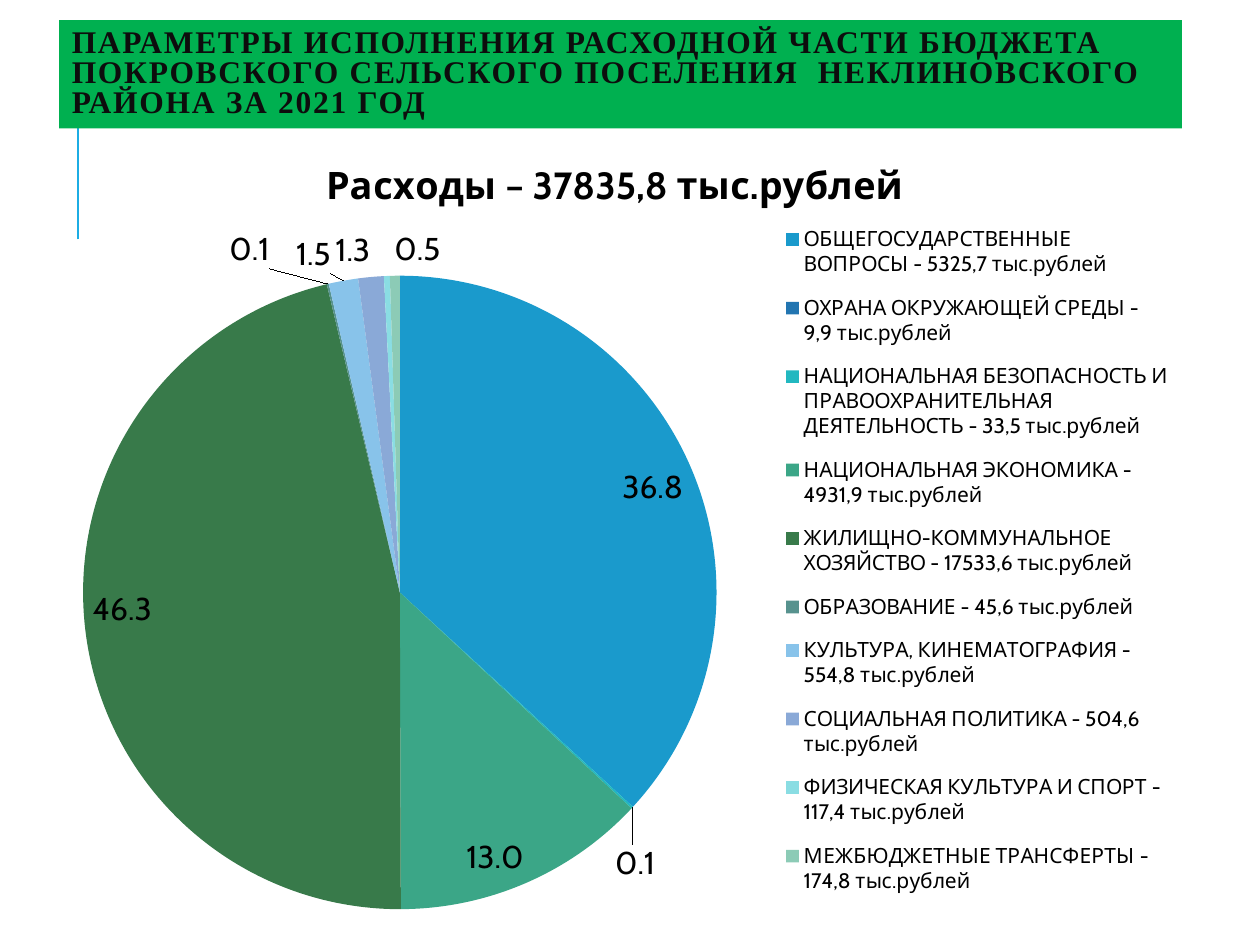
from lxml import etree
from pptx import Presentation
from pptx.chart.data import CategoryChartData
from pptx.dml.color import RGBColor
from pptx.enum.chart import XL_CHART_TYPE, XL_LABEL_POSITION, XL_LEGEND_POSITION
from pptx.enum.shapes import MSO_CONNECTOR
from pptx.enum.text import MSO_ANCHOR, PP_ALIGN
from pptx.oxml import parse_xml
from pptx.oxml.ns import nsdecls, qn
from pptx.util import Inches, Pt

PIE = XL_CHART_TYPE.PIE
INSIDE, OUTSIDE = XL_LABEL_POSITION.INSIDE_END, XL_LABEL_POSITION.OUTSIDE_END
BLACK = RGBColor(0x00, 0x00, 0x00)
TITLE_TEXT = RGBColor(0x0D, 0x0D, 0x0D)
TITLE_FILL = RGBColor(0x00, 0xB0, 0x50)
ACCENT = RGBColor(0x1C, 0xAD, 0xE4)

# Category, share in percent, slice colour, label position, label shift (share of chart size)
EXPENSES = [
    ("ОБЩЕГОСУДАРСТВЕННЫЕ ВОПРОСЫ - 5325,7 тыс.рублей", 36.8, RGBColor(0x1A, 0x9A, 0xCC), INSIDE, None),
    ("ОХРАНА ОКРУЖАЮЩЕЙ СРЕДЫ - 9,9 тыс.рублей", 0, RGBColor(0x22, 0x75, 0xB1), OUTSIDE, (0.03, -0.02)),
    ("НАЦИОНАЛЬНАЯ БЕЗОПАСНОСТЬ И ПРАВООХРАНИТЕЛЬНАЯ ДЕЯТЕЛЬНОСТЬ - 33,5 тыс.рублей",
     0.1, RGBColor(0x22, 0xB8, 0xC0), OUTSIDE, (-0.02, 0.04)),
    ("НАЦИОНАЛЬНАЯ ЭКОНОМИКА - 4931,9 тыс.рублей", 13, RGBColor(0x3B, 0xA6, 0x87), INSIDE, None),
    ("ЖИЛИЩНО-КОММУНАЛЬНОЕ ХОЗЯЙСТВО - 17533,6 тыс.рублей", 46.3, RGBColor(0x38, 0x7A, 0x4A), INSIDE, None),
    ("ОБРАЗОВАНИЕ - 45,6 тыс.рублей", 0.1, RGBColor(0x57, 0x92, 0x8E), OUTSIDE, (-0.05, -0.01)),
    ("КУЛЬТУРА, КИНЕМАТОГРАФИЯ - 554,8 тыс.рублей", 1.5, RGBColor(0x88, 0xC3, 0xEA), OUTSIDE, (-0.01, 0)),
    ("СОЦИАЛЬНАЯ ПОЛИТИКА - 504,6 тыс.рублей", 1.3, RGBColor(0x8A, 0xA9, 0xD7), OUTSIDE, None),
    ("ФИЗИЧЕСКАЯ КУЛЬТУРА И СПОРТ - 117,4 тыс.рублей", 0.3, RGBColor(0x8A, 0xDD, 0xE3), None, None),
    ("МЕЖБЮДЖЕТНЫЕ ТРАНСФЕРТЫ - 174,8 тыс.рублей", 0.5, RGBColor(0x8C, 0xCB, 0xB6), OUTSIDE, (0.02, 0)),
]


def set_font(font, size, bold=False):
    font.name, font.size, font.bold = "Cabin", Pt(size), bold
    font.color.rgb = BLACK


def manual_layout(x, y, width=None, height=None, inner=False):
    """Return a c:layout: a frame in shares of the chart, or a shift when no size is given."""
    entries = [("layoutTarget", "inner")] if inner else []
    if width:
        entries += [("xMode", "edge"), ("yMode", "edge")]
    entries += [("x", x), ("y", y)]
    if width:
        entries += [("w", width), ("h", height)]
    body = "".join(f'<c:{tag} val="{value}"/>' for tag, value in entries)
    return parse_xml(f'<c:layout {nsdecls("c")}><c:manualLayout>{body}</c:manualLayout></c:layout>')


deck = Presentation()
deck.slide_width, deck.slide_height = Inches(10), Inches(7.5)
page = deck.slides.add_slide(deck.slide_layouts[5])

# Accent line, behind the title
accent_line = page.shapes.add_connector(
    MSO_CONNECTOR.STRAIGHT, Inches(0.62), Inches(1.9), Inches(0.62), Inches(0.9))
accent_line.line.color.rgb = ACCENT
accent_line.line.width = Pt(1.5)
etree.SubElement(accent_line._element.spPr, qn("a:effectLst"))
page.shapes._spTree.insert(2, accent_line._element)

# Title
title = page.shapes.title
title.left, title.top, title.width, title.height = map(Inches, (0.47, 0.16, 8.91, 0.86))
title.fill.solid()
title.fill.fore_color.rgb = TITLE_FILL
frame = title.text_frame
frame.word_wrap = True
frame.vertical_anchor = MSO_ANCHOR.MIDDLE
frame.text = ("ПАРАМЕТРЫ ИСПОЛНЕНИЯ РАСХОДНОЙ ЧАСТИ БЮДЖЕТА ПОКРОВСКОГО СЕЛЬСКОГО "
              "ПОСЕЛЕНИЯ  НЕКЛИНОВСКОГО РАЙОНА ЗА 2021 ГОД")
para = frame.paragraphs[0]
para.alignment = PP_ALIGN.LEFT
para.line_spacing = 0.8
span = para.runs[0]
span.font.name, span.font.size, span.font.bold = "Times New Roman", Pt(18), True
span.font.color.rgb = TITLE_TEXT
span._r.get_or_add_rPr().set("spc", "100")

# Pie chart
data = CategoryChartData(number_format="0.0")
data.categories = [expense[0] for expense in EXPENSES]
data.add_series("Series 1", [expense[1] for expense in EXPENSES])
chart = page.shapes.add_chart(
    PIE, Inches(0.39), Inches(1.02), Inches(8.98), Inches(6.35), data).chart
set_font(chart.font, 18)

chart.has_title = True
chart.chart_title.text_frame.text = "Расходы – 37835,8 тыс.рублей"
set_font(chart.chart_title.text_frame.paragraphs[0].runs[0].font, 21.6, bold=True)
chart.chart_title.include_in_layout = False

chart.has_legend = True
legend = chart.legend
legend.position = XL_LEGEND_POSITION.RIGHT
legend.include_in_layout = False
set_font(legend.font, 12)
legend._element.find(qn("c:legendPos")).addnext(manual_layout(0.65, 0.1, 0.34, 0.88))

plot = chart.plots[0]
plot.vary_by_categories = True
plot_area = chart._chartSpace.chart.plotArea
for layout in plot_area.findall(qn("c:layout")):
    plot_area.remove(layout)
plot_area.insert(0, manual_layout(0.03, 0.18, 0.56, 0.8, inner=True))

series = plot.series[0]
labels = series.data_labels
labels.show_value = True
labels.number_format, labels.number_format_is_linked = "0.0", False
set_font(labels.font, 18)
labels._element.find(qn("c:showLeaderLines")).set("val", "1")

for index, (_, _, color, position, shift) in enumerate(EXPENSES):
    point = series.points[index]
    point.format.fill.solid()
    point.format.fill.fore_color.rgb = color
    if position is not None:
        set_font(point.data_label.font, 18)
        point.data_label.position = position
    else:
        hidden = parse_xml(f'<c:dLbl {nsdecls("c")}><c:idx val="{index}"/><c:delete val="1"/></c:dLbl>')
        labels._element.findall(qn("c:dLbl"))[-1].addnext(hidden)
    if shift:
        labels._element.findall(qn("c:dLbl"))[index].insert(1, manual_layout(*shift))

deck.save("out.pptx")
